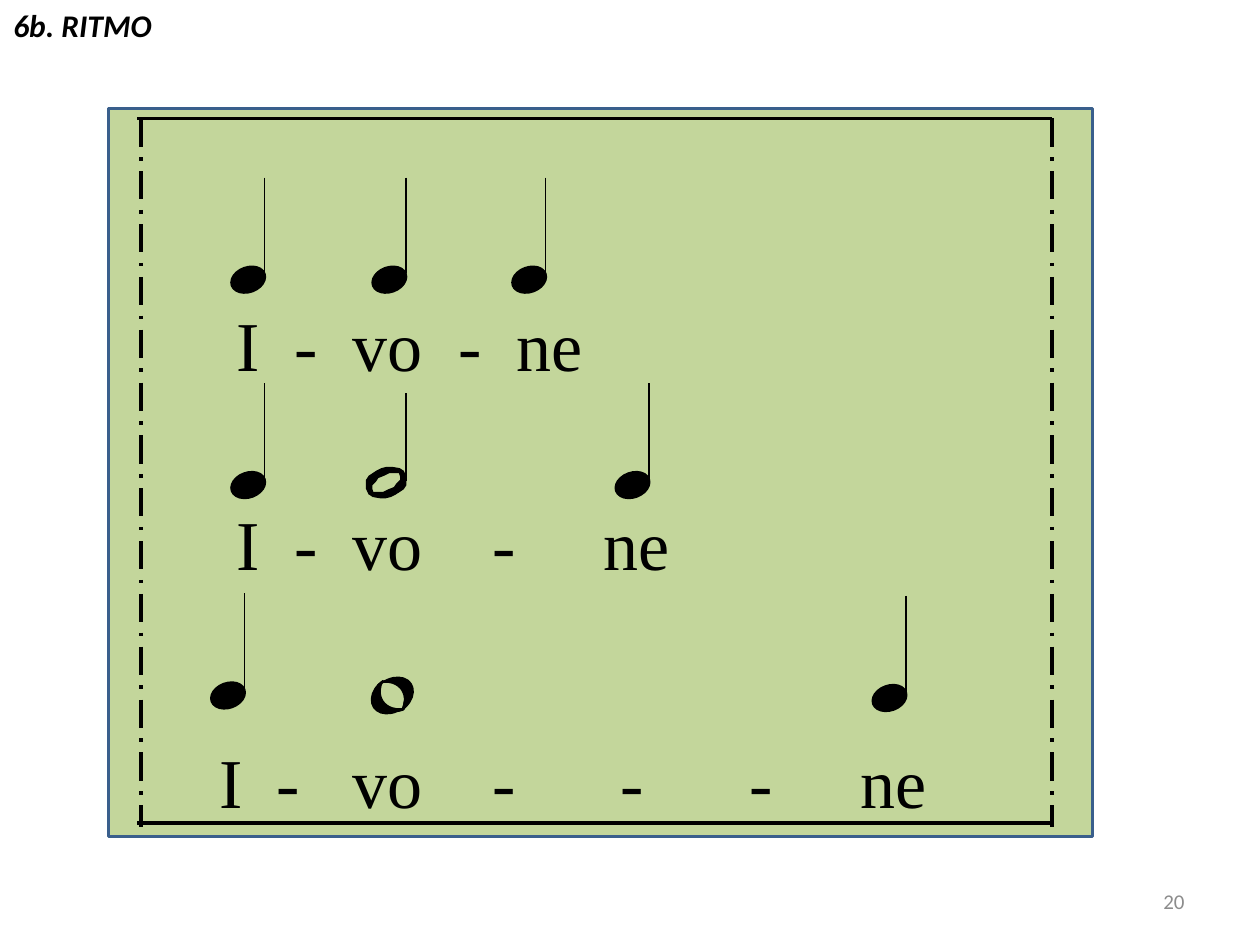
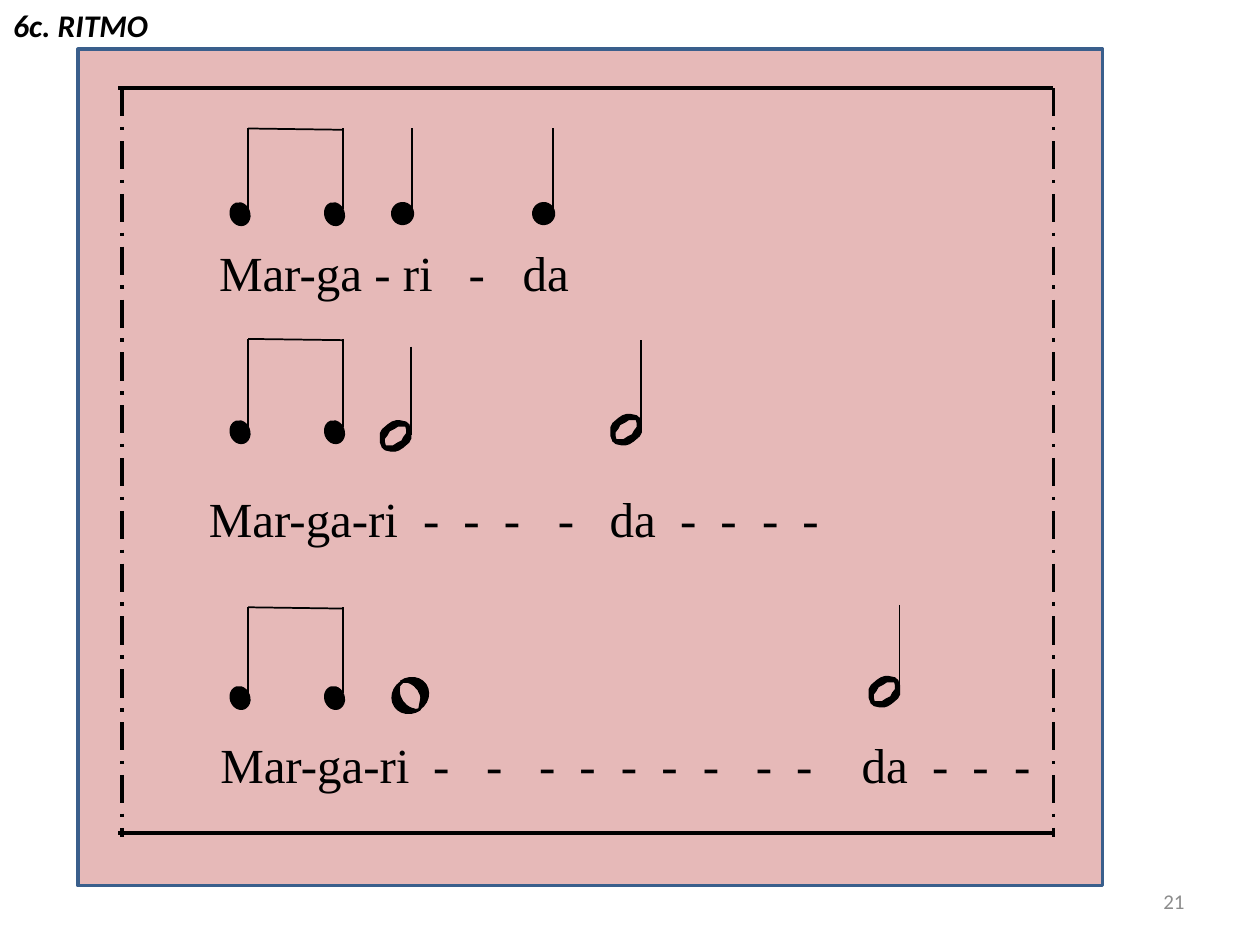
from lxml import etree
from pptx import Presentation
from pptx.dml.color import RGBColor
from pptx.enum.dml import MSO_LINE
from pptx.enum.shapes import MSO_CONNECTOR, MSO_SHAPE
from pptx.enum.text import MSO_ANCHOR, PP_ALIGN
from pptx.oxml.ns import qn
from pptx.util import Inches, Pt

COLORS = {
    "ink": "000000",
    "border": "3A5F8C",
    "green": "C3D69B",
    "pink": "E6B9B8",
    "page": "8C8C8C",
}
INSET = 0.1
HALF_WIDTH, HALF_HEIGHT = 31, 24
HALF_RIM = [
    (29, 3), (26, 1), (20, 0), (16, 0), (12, 1), (8, 3), (5, 5), (2, 7),
    (0, 10), (0, 14), (0, 17), (2, 21), (5, 20), (4, 17), (4, 14), (7, 11),
    (9, 8), (14, 6), (18, 4), (22, 4), (27, 4),
]
WHOLE_RIMS = [
    [(22, 8), (30, 1), (50, -2), (100, -2)],
    [(67, 19), (120, 21), (140, 20), (155, 8)],
]


class RhythmDeck:
    def __init__(self):
        self.deck = Presentation()
        self.deck.slide_width = Inches(10)
        self.deck.slide_height = Inches(7.5)
        self.slide = None

    def start(self, title, title_width, page):
        self.slide = self.deck.slides.add_slide(self.deck.slide_layouts[6])
        heading = self.text_box(0, 0, title_width, 0.4, wrap=False)
        heading.paragraphs[0].alignment = PP_ALIGN.CENTER
        self.add_words(heading.paragraphs[0], title, 18, bold=True)
        footer = self.text_box(7.17, 6.95, 2.33, 0.4, MSO_ANCHOR.MIDDLE)
        footer.paragraphs[0].alignment = PP_ALIGN.RIGHT
        self.add_words(footer.paragraphs[0], page, 12, color="page")

    def rgb(self, name):
        return RGBColor.from_string(COLORS[name])

    def text_box(self, left, top, width, height, anchor=MSO_ANCHOR.TOP, wrap=True):
        frame = self.slide.shapes.add_textbox(
            Inches(left), Inches(top), Inches(width), Inches(height)).text_frame
        frame.word_wrap = wrap
        frame.vertical_anchor = anchor
        return frame

    def add_words(self, paragraph, text, size, font="Calibri", color="ink", bold=False):
        run = paragraph.add_run()
        run.text = text
        run.font.name = font
        run.font.size = Pt(size)
        run.font.color.rgb = self.rgb(color)
        run.font.bold = run.font.italic = bold

    def paint(self, shape, fill="ink", border="ink", weight=1):
        shape.shadow.inherit = False
        if fill:
            shape.fill.solid()
            shape.fill.fore_color.rgb = self.rgb(fill)
        else:
            shape.fill.background()
        shape.line.color.rgb = self.rgb(border)
        shape.line.width = Pt(weight)

    def preset(self, kind, left, top, width, height, rotation=0, **style):
        shape = self.slide.shapes.add_shape(
            kind, Inches(left), Inches(top), Inches(width), Inches(height))
        shape.rotation = rotation
        self.paint(shape, **style)
        return shape

    def outline(self, points, left, top, x_unit, closed, **style):
        builder = self.slide.shapes.build_freeform(
            *points[0], scale=(Inches(x_unit), Inches(0.01)))
        builder.add_line_segments(points[1:], close=closed)
        self.paint(builder.convert_to_shape(Inches(left), Inches(top)), **style)

    def line(self, x1, y1, x2, y2, weight=1, dash=None):
        connector = self.slide.shapes.add_connector(
            MSO_CONNECTOR.STRAIGHT, Inches(x1), Inches(y1), Inches(x2), Inches(y2))
        connector.line.color.rgb = self.rgb("ink")
        connector.line.width = Pt(weight)
        if dash:
            connector.line.dash_style = dash
        etree.SubElement(connector._element.spPr, qn("a:effectLst"))

    def panel(self, left, top, width, height, fill):
        self.preset(MSO_SHAPE.RECTANGLE, left, top, width, height,
                    fill=fill, border="border", weight=2)

    def frame(self, left, top, right, bottom):
        for y in (top, bottom):
            self.line(left, y, right, y, 2)
        for x in (right, left + 0.03):
            self.line(x, top, x, bottom + 0.03, 2, MSO_LINE.LONG_DASH_DOT)

    def quarter(self, left, top, width, height, stem_top):
        self.preset(MSO_SHAPE.OVAL, left, top, width, height, 340)
        stem = left + width - 0.01
        self.line(stem, stem_top, stem, top + 0.05)

    def eighths(self, top, stem_top):
        for left in (1.83, 2.58):
            self.quarter(left, top, 0.15, 0.18, stem_top)
        self.line(1.97, stem_top, 2.72, stem_top + 0.01)

    def half(self, left, top, width, stem_top):
        lower_rim = [(HALF_WIDTH - x, HALF_HEIGHT - y) for x, y in HALF_RIM]
        for rim in (HALF_RIM, lower_rim):
            self.outline(rim, left, top, width / HALF_WIDTH, True, weight=0.75)
        self.line(left + width, stem_top, left + width, top + 0.11)

    def whole(self, left, top, width):
        self.preset(MSO_SHAPE.MOON, left, top, width, 0.27, 325.8, weight=0.75)
        right_side = self.preset(MSO_SHAPE.MOON, left + 0.82 * width, top - 0.09,
                                 width, 0.27, 325.8, weight=0.75)
        right_side._element.spPr.xfrm.set("flipH", "1")
        for rim in WHOLE_RIMS:
            self.outline(rim, left, top, width / 100, False, fill=None, weight=1.5)

    def lyrics(self, left, top, width, height, size, verses, gaps=(0,),
               anchor=MSO_ANCHOR.TOP):
        frame = self.text_box(left, top, width, height, anchor)
        origin = left + INSET
        for index, (verse, gap) in enumerate(zip(verses, gaps)):
            paragraph = frame.add_paragraph() if index else frame.paragraphs[0]
            if gap:
                paragraph.space_before = Pt(gap)
            stops = etree.SubElement(paragraph._p.get_or_add_pPr(), qn("a:tabLst"))
            text = ""
            for x, syllable in verse:
                if x > origin + 0.01:
                    etree.SubElement(stops, qn("a:tab"),
                                     pos=str(Inches(x - origin)), algn="l")
                    text += "\t"
                text += syllable
            self.add_words(paragraph, text, size, "Times New Roman")


def dashes(*positions):
    return [(x, "-") for x in positions]


def ivone(deck):
    deck.start("6b. RITMO", 1.31, "20")
    deck.panel(0.86, 0.86, 7.81, 5.78, "green")
    deck.frame(1.09, 0.94, 8.35, 6.53)
    for left, top in [(1.83, 2.12), (2.95, 2.12), (4.06, 2.12), (1.83, 3.75),
                      (4.88, 3.75), (1.67, 5.42), (6.92, 5.44)]:
        deck.quarter(left, top, 0.28, 0.2, top - 0.71)
    deck.half(2.91, 3.71, 0.31, 3.12)
    deck.whole(2.95, 5.43, 0.18)
    verses = [
        [(1.88, "I"), (2.34, "-"), (2.8, "vo"), (3.64, "-"), (4.1, "ne")],
        [(1.88, "I"), (2.34, "-"), (2.8, "vo"), (3.91, "-"), (4.79, "ne")],
        [(1.74, "I"), (2.2, "-"), (2.8, "vo"), *dashes(3.91, 4.93, 5.95), (6.83, "ne")],
    ]
    deck.lyrics(0.39, 2.27, 9.14, 4.38, 40, verses, (0, 66, 88), MSO_ANCHOR.MIDDLE)


def margarida(deck):
    deck.start("6c. RITMO", 1.28, "21")
    deck.panel(0.62, 0.39, 8.13, 6.64, "pink")
    deck.frame(0.94, 0.7, 8.36, 6.61)
    for top, stem_top in [(1.61, 1.02), (3.34, 2.69), (5.45, 4.82)]:
        deck.eighths(top, stem_top)
    for left in (3.11, 4.23):
        deck.quarter(left, 1.61, 0.17, 0.17, 1.02)
    for left, top, stem_top in [(3.02, 3.34, 2.75), (4.85, 3.29, 2.7), (6.9, 5.37, 4.8)]:
        deck.half(left, top, 0.24, stem_top)
    deck.whole(3.12, 5.43, 0.15)
    deck.lyrics(1.64, 1.87, 3.01, 0.57, 28,
                [[(1.74, "Mar-ga - ri"), (3.72, "-"), (4.15, "da")]],
                anchor=MSO_ANCHOR.MIDDLE)
    deck.lyrics(1.56, 3.83, 5.11, 0.88, 28,
                [[(1.66, "Mar-ga-ri"), *dashes(3.36, 3.68, 4.0, 4.43),
                  (4.84, "da"), *dashes(5.4, 5.72, 6.05, 6.37)]])
    deck.lyrics(1.56, 5.78, 7, 1.04, 28,
                [[(1.75, "Mar-ga-ri"),
                  *dashes(3.44, 3.86, 4.28, 4.6, 4.93, 5.25, 5.58, 6.0, 6.32),
                  (6.84, "da"), *dashes(7.4, 7.72, 8.05)]])


def main():
    deck = RhythmDeck()
    ivone(deck)
    margarida(deck)
    deck.deck.save("out.pptx")


if __name__ == "__main__":
    main()
